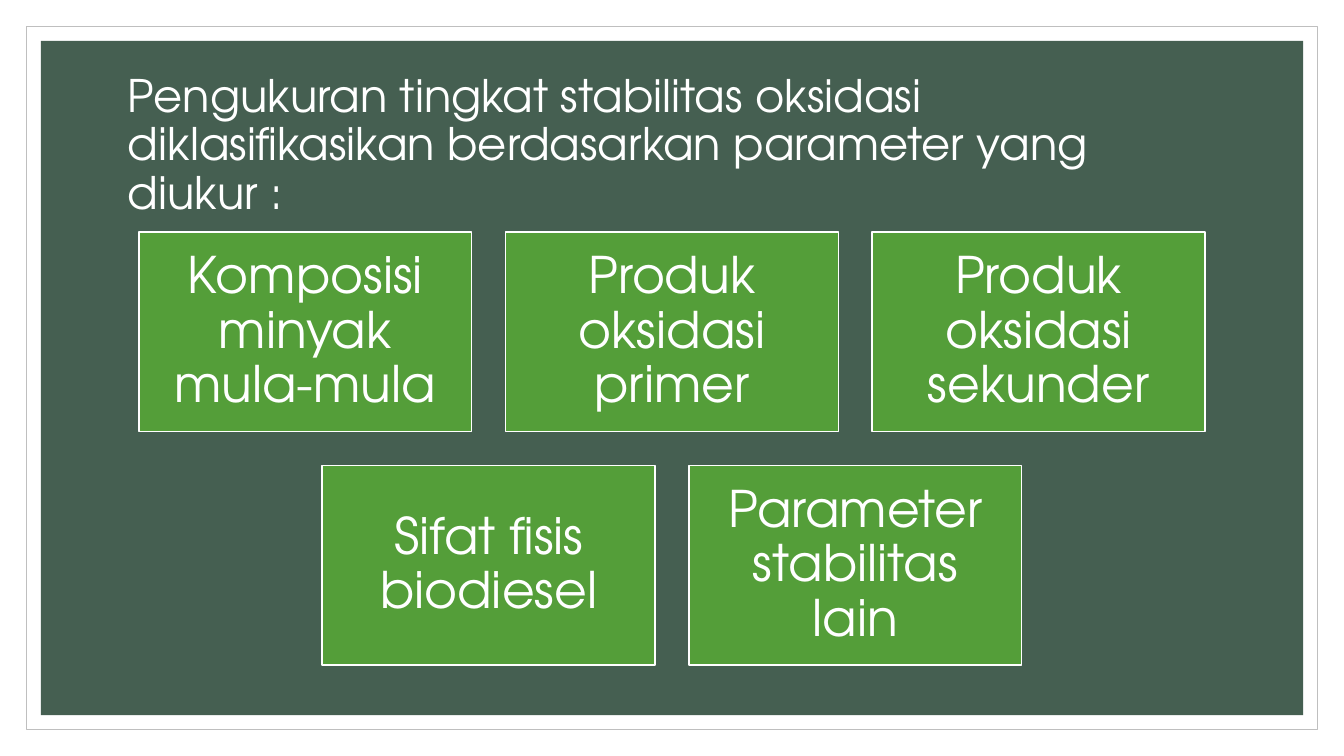
"""Build the slide on parameters of oxidation stability."""
from pptx import Presentation
from pptx.dml.color import RGBColor
from pptx.enum import shapes, text
from pptx.util import Cm, Pt

HEADING = ("Pengukuran tingkat stabilitas oksidasi diklasifikasikan "
           "berdasarkan parameter yang diukur :")
PARAMETER_ROWS = [
    ["Komposisi minyak mula-mula", "Produk oksidasi primer", "Produk oksidasi sekunder"],
    ["Sifat fisis biodiesel", "Parameter stabilitas lain"],
]
FONT = "TeX Gyre Adventor"
WHITE, GREY, DARK_GREEN, GREEN = "FFFFFF", "BFBFBF", "455F51", "549E39"
SLIDE_W, SLIDE_H = 33.87, 19.05
CARD_W, CARD_H, GAP, CARDS_TOP = 8.39, 5.03, 0.85, 5.85
CARD_INSET = 0.39


def paint(color_format, value):
    color_format.rgb = RGBColor.from_string(value)


def add_box(slide, left, top, width, height, fill, line=None, line_width=1):
    box = slide.shapes.add_shape(shapes.MSO_SHAPE.RECTANGLE,
                                 Cm(left), Cm(top), Cm(width), Cm(height))
    box.shadow.inherit = False
    box.fill.solid()
    paint(box.fill.fore_color, fill)
    if line:
        paint(box.line.color, line)
        box.line.width = Pt(line_width)
    else:
        box.line.fill.background()
    return box


def write(shape, words, size, align):
    frame = shape.text_frame
    frame.text = words
    frame.word_wrap = True
    frame.auto_size = text.MSO_AUTO_SIZE.NONE
    frame.vertical_anchor = text.MSO_ANCHOR.MIDDLE
    paragraph = frame.paragraphs[0]
    paragraph.alignment = align
    paragraph.line_spacing = 0.9
    font = paragraph.runs[0].font
    font.name, font.size = FONT, Pt(size)
    paint(font.color, WHITE)


def add_frame(slide):
    for margin, fill, line in [(0.66, WHITE, GREY), (1.03, DARK_GREEN, None)]:
        add_box(slide, margin, margin, SLIDE_W - 2 * margin, SLIDE_H - 2 * margin,
                fill, line, 0.5)


def add_heading(slide):
    heading = slide.shapes.title
    slide.shapes.element.append(heading.element)
    heading.left, heading.top = Cm(2.97), Cm(1.78)
    heading.width, heading.height = Cm(27.94), Cm(3.81)
    write(heading, HEADING, 32, text.PP_ALIGN.LEFT)


def add_cards(slide):
    for row, parameters in enumerate(PARAMETER_ROWS):
        row_width = len(parameters) * (CARD_W + GAP) - GAP
        row_left = (SLIDE_W - row_width) / 2
        for column, parameter in enumerate(parameters):
            card = add_box(slide, row_left + column * (CARD_W + GAP),
                           CARDS_TOP + row * (CARD_H + GAP),
                           CARD_W, CARD_H, GREEN, WHITE)
            write(card, parameter, 36, text.PP_ALIGN.CENTER)
            frame = card.text_frame
            frame.margin_left = frame.margin_right = Cm(CARD_INSET)
            frame.margin_top = frame.margin_bottom = Cm(CARD_INSET)


def main():
    deck = Presentation()
    deck.slide_width, deck.slide_height = Cm(SLIDE_W), Cm(SLIDE_H)
    slide = deck.slides.add_slide(deck.slide_layouts[5])
    add_frame(slide)
    add_heading(slide)
    add_cards(slide)
    deck.save("out.pptx")


if __name__ == "__main__":
    main()
